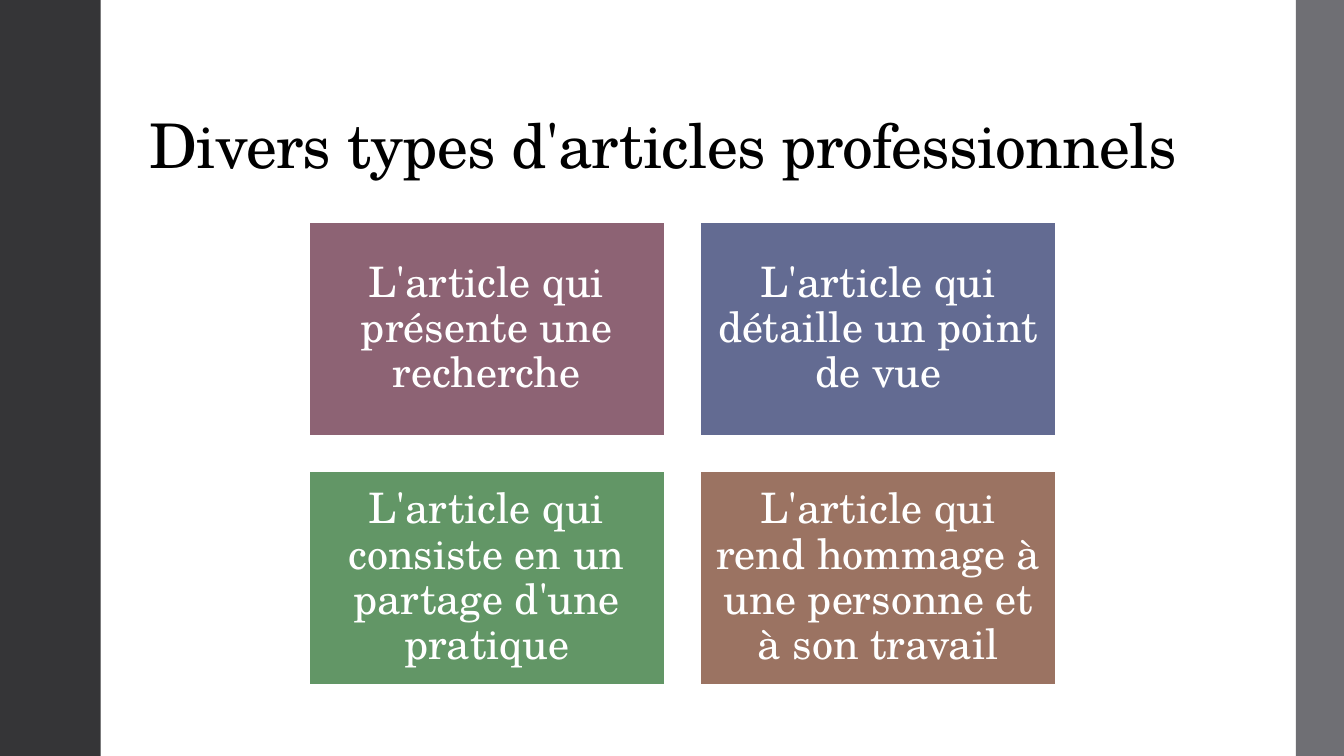
from pptx import Presentation
from pptx.dml.color import RGBColor
from pptx.enum.shapes import MSO_SHAPE
from pptx.enum.text import MSO_ANCHOR, MSO_AUTO_SIZE, PP_ALIGN
from pptx.util import Cm, Pt

RECTANGLE = MSO_SHAPE.RECTANGLE
MIDDLE, BOTTOM = MSO_ANCHOR.MIDDLE, MSO_ANCHOR.BOTTOM
LEFT, CENTER = PP_ALIGN.LEFT, PP_ALIGN.CENTER
NO_AUTOFIT = MSO_AUTO_SIZE.NONE

FONT = "TeX Gyre Schola"
BLACK = RGBColor(0x00, 0x00, 0x00)
WHITE = RGBColor(0xFF, 0xFF, 0xFF)
CHARCOAL = RGBColor(0x35, 0x35, 0x37)
GREY = RGBColor(0x6F, 0x6F, 0x74)
MAUVE = RGBColor(0x8D, 0x63, 0x74)
BLUE = RGBColor(0x63, 0x6B, 0x92)
GREEN = RGBColor(0x62, 0x96, 0x66)
BROWN = RGBColor(0x9B, 0x73, 0x62)

SLIDE_WIDTH, SLIDE_HEIGHT = 33.87, 19.05
CARD_WIDTH, CARD_HEIGHT = 8.97, 5.38
CARD_LEFT, CARD_TOP = 7.78, 5.6
CARD_GAP = 0.9
COLUMNS = 2
CARDS = [
    ("L'article qui présente une recherche", MAUVE),
    ("L'article qui détaille un point de vue", BLUE),
    ("L'article qui consiste en un partage d'une pratique", GREEN),
    ("L'article qui rend hommage à une personne et à son travail", BROWN),
]


def write_text(shape, text, size, color, alignment, anchor):
    frame = shape.text_frame
    frame.text = text
    frame.word_wrap = True
    frame.auto_size = NO_AUTOFIT
    frame.vertical_anchor = anchor
    paragraph = frame.paragraphs[0]
    paragraph.alignment = alignment
    paragraph.line_spacing = 0.9
    font = paragraph.runs[0].font
    font.name = FONT
    font.size = Pt(size)
    font.color.rgb = color
    return paragraph


def add_title(slide, text):
    title = slide.shapes.title
    title.left, title.top = Cm(3.51), Cm(1.02)
    title.width, title.height = Cm(27.38), Cm(3.68)
    paragraph = write_text(title, text, 44, BLACK, LEFT, BOTTOM)
    # Character spacing, in hundredths of a point
    paragraph.runs[0].font._element.set("spc", "-50")


def add_rectangle(slide, left, top, width, height, color):
    shape = slide.shapes.add_shape(RECTANGLE, Cm(left), Cm(top), Cm(width), Cm(height))
    shape.shadow.inherit = False
    shape.fill.solid()
    shape.fill.fore_color.rgb = color
    shape.line.fill.background()
    return shape


def add_card(slide, left, top, text, color):
    card = add_rectangle(slide, left, top, CARD_WIDTH, CARD_HEIGHT, color)
    card.line.color.rgb = WHITE
    card.line.width = Pt(1.35)
    frame = card.text_frame
    frame.margin_left = frame.margin_right = Cm(0.3)
    frame.margin_top = frame.margin_bottom = Cm(0.3)
    write_text(card, text, 30, WHITE, CENTER, MIDDLE)


def main():
    presentation = Presentation()
    presentation.slide_width = Cm(SLIDE_WIDTH)
    presentation.slide_height = Cm(SLIDE_HEIGHT)
    title_only = presentation.slide_layouts[5]
    slide = presentation.slides.add_slide(title_only)

    add_title(slide, "Divers types d'articles professionnels")
    add_rectangle(slide, 0, 0, 2.54, SLIDE_HEIGHT, CHARCOAL)
    add_rectangle(slide, 32.66, 0, 1.21, SLIDE_HEIGHT, GREY)
    for index, (text, color) in enumerate(CARDS):
        row, column = divmod(index, COLUMNS)
        left = CARD_LEFT + column * (CARD_WIDTH + CARD_GAP)
        top = CARD_TOP + row * (CARD_HEIGHT + CARD_GAP)
        add_card(slide, left, top, text, color)

    presentation.save("out.pptx")


if __name__ == "__main__":
    main()
